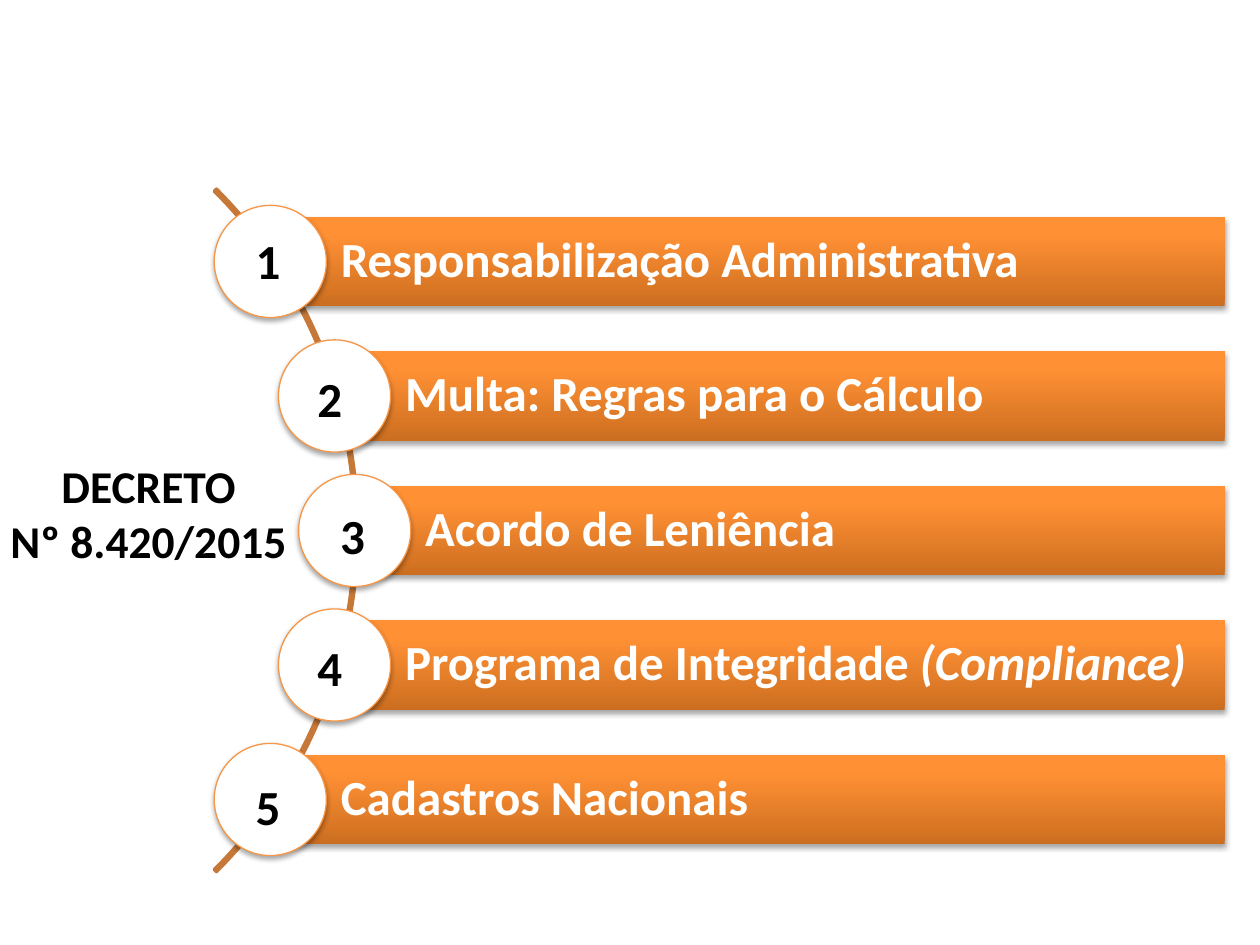
from copy import deepcopy

from lxml.etree import SubElement
from pptx import Presentation
from pptx.dml.color import RGBColor
from pptx.enum.shapes import MSO_SHAPE as Shape
from pptx.enum.text import MSO_ANCHOR as Anchor, PP_ALIGN as Align
from pptx.oxml.ns import qn
from pptx.util import Inches, Pt

COLUMNS, ROWS = 100, 75
CELL = Inches(0.1)
COLORS = {
    "black": "000000",
    "white": "FFFFFF",
    "arc": "C67838",
    "ring": "F79646",
    "bar_bottom": "CC6E20",
    "bar_middle": "FF9034",
    "bar_top": "FF9136",
}
BAR_STOPS = [(0, "bar_bottom"), (0.8, "bar_middle"), (1, "bar_top")]
TOPICS = [
    {"runs": [("Responsabilização Administrativa", False)], "indent": 0, "digit": (2.3, 1.5)},
    {"runs": [("Multa: Regras para o Cálculo", False)], "indent": 5.1, "digit": (2.1, 1.8)},
    {"runs": [("Acordo de Leniência", False)], "indent": 6.7, "digit": (2.3, 2)},
    {"runs": [("Programa de Integridade ", False), ("(Compliance)", True)],
     "indent": 5.1, "digit": (2.1, 1.8)},
    {"runs": [("Cadastros Nacionais", False)], "indent": 0, "digit": (2.3, 2.1)},
]


def color(name):
    """Return the named colour."""
    return RGBColor.from_string(COLORS[name])


def place(box):
    """Turn a box in grid cells into slide lengths."""
    return [round(value * CELL) for value in box]


def write(shape, paragraphs, size=28, fill="black", align=Align.LEFT,
          anchor=Anchor.TOP, insets=(1, 0.5, 1, 0.5), spacing=1):
    """Write paragraphs of (text, italic) runs into a shape."""
    frame = shape.text_frame
    frame.word_wrap = True
    frame.vertical_anchor = anchor
    (frame.margin_left, frame.margin_top,
     frame.margin_right, frame.margin_bottom) = place(insets)
    for index, runs in enumerate(paragraphs):
        paragraph = frame.add_paragraph() if index else frame.paragraphs[0]
        paragraph.alignment = align
        paragraph.line_spacing = spacing
        for text, italic in runs:
            run = paragraph.add_run()
            run.text = text
            run.font.name = "Calibri"
            run.font.size = Pt(size)
            run.font.bold = True
            run.font.italic = italic
            run.font.color.rgb = color(fill)


def add_shadow(shape):
    """Give a shape a soft shadow falling downwards."""
    shape.shadow.inherit = False
    effects = shape._element.spPr.find(qn("a:effectLst"))
    shadow = SubElement(effects, qn("a:outerShdw"), blurRad=str(Pt(3.1)),
                        dist=str(Pt(1.8)), dir="5400000", rotWithShape="0")
    black = SubElement(shadow, qn("a:srgbClr"), val=COLORS["black"])
    SubElement(black, qn("a:alpha"), val="35000")


def add_bar(slide, box, runs):
    """Draw one gradient bar with its topic."""
    bar = slide.shapes.add_shape(Shape.RECTANGLE, *place(box))
    bar.fill.gradient()
    bar.fill.gradient_angle = 90
    stop_list = bar._element.spPr.find(qn("a:gradFill")).find(qn("a:gsLst"))
    stop_list.append(deepcopy(stop_list[0]))
    for stop, (position, name) in zip(bar.fill.gradient_stops, BAR_STOPS):
        stop.position = position
        stop.color.rgb = color(name)
    bar.line.fill.background()
    add_shadow(bar)
    write(bar, [runs], fill="white", anchor=Anchor.MIDDLE,
          insets=(5.6, 0.8, 0.8, 0.8), spacing=0.9)


def add_circle(slide, box):
    """Draw the white circle behind a number."""
    circle = slide.shapes.add_shape(Shape.OVAL, *place(box))
    circle.fill.solid()
    circle.fill.fore_color.rgb = color("white")
    circle.line.color.rgb = color("ring")
    circle.line.width = Pt(0.75)
    add_shadow(circle)


def add_arc(slide, box):
    """Draw the thin arc that links the circles."""
    arc = slide.shapes.add_shape(Shape.BLOCK_ARC, *place(box))
    for index, value in enumerate((189, 27, 0.003)):
        arc.adjustments[index] = value
    arc.fill.background()
    arc.line.color.rgb = color("arc")
    arc.line.width = Pt(2)
    arc.shadow.inherit = False


def add_topics(slide, box, diameter=8.9, bar_height=7.1):
    """Spread the numbered topics evenly down the box."""
    left, top, width, height = box
    pitch = (height - diameter) / (len(TOPICS) - 1)
    for index, topic in enumerate(TOPICS):
        circle_left = left + topic["indent"]
        circle_top = top + index * pitch
        bar_left = circle_left + diameter / 2
        bar_top = circle_top + (diameter - bar_height) / 2
        add_bar(slide, (bar_left, bar_top, left + width - bar_left, bar_height), topic["runs"])
        add_circle(slide, (circle_left, circle_top, diameter, diameter))
        across, down = topic["digit"]
        digit = slide.shapes.add_textbox(
            *place((circle_left + across, circle_top + down, 2.2, 5.7)))
        write(digit, [[(str(index + 1), False)]])


def add_decree(slide, box):
    """Write the name of the decree beside the arc."""
    decree = slide.shapes.add_textbox(*place(box))
    write(decree, [[("DECRETO", False)], [("Nº 8.420/2015", False)]],
          size=26, align=Align.CENTER, anchor=Anchor.MIDDLE)


def main():
    """Build and save the slide."""
    presentation = Presentation()
    presentation.slide_width = COLUMNS * CELL
    presentation.slide_height = ROWS * CELL
    slide = presentation.slides.add_slide(presentation.slide_layouts[6])
    add_decree(slide, (-1.7, 36, 27, 9.4))
    add_arc(slide, (-48.2, 3.8, 76.6, 76.6))
    add_topics(slide, (17, 16.3, 80.2, 51.6))
    presentation.save("out.pptx")


if __name__ == "__main__":
    main()
